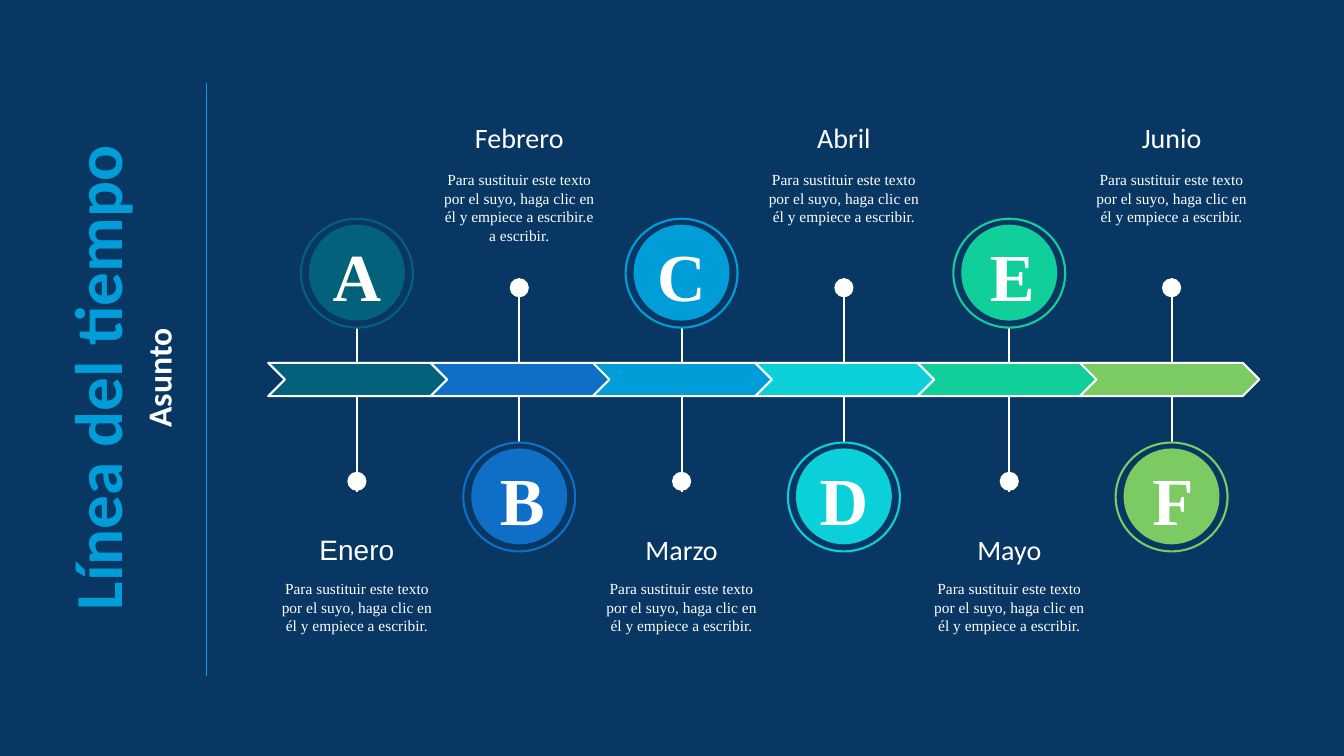
import pptx
import pptx.dml.color
import pptx.enum.shapes
import pptx.enum.text
import pptx.util
from lxml import etree
from pptx.oxml.ns import qn

Inches = pptx.util.Inches
Pt = pptx.util.Pt
SHAPE = pptx.enum.shapes.MSO_SHAPE

# Content
TITLE = "Línea del tiempo"
SUBTITLE = "Asunto"
BODY = "Para sustituir este texto por el suyo, haga clic en él y empiece a escribir."
BODY_LONG = BODY + "e a escribir."

COLORS = {
    "background": "083763", "white": "FFFFFF", "accent": "009DD9",
    "A": "04617B", "B": "0F6FC6", "C": "009DD9",
    "D": "0BD0D9", "E": "10CF9B", "F": "7CCA62",
}

# Letter, month, month font, description, centre of the stem, nudge of the letter
MONTHS = [
    ("A", "Enero", "Arial", BODY, 3.54, -0.05),
    ("B", "Febrero", "Calibri", BODY_LONG, 5.15, 0),
    ("C", "Marzo", "Calibri", BODY, 6.76, -0.05),
    ("D", "Abril", "Calibri", BODY, 8.37, -0.05),
    ("E", "Mayo", "Calibri", BODY, 10.01, 0),
    ("F", "Junio", "Calibri", BODY, 11.62, 0),
]

# Vertical places for circles above the band and for circles below it
CIRCLE_ABOVE = {"ring": 2.17, "stem": (4.88, 3.25), "dot": 4.68, "month": 5.23, "body": 5.7}
CIRCLE_BELOW = {"ring": 4.39, "stem": (2.76, 4.39), "dot": 2.76, "month": 1.15, "body": 1.64}

BAND_LEFT, BAND_TOP, BAND_PITCH = 2.66, 3.6, 1.61
BLOCK_WIDTH, BAND_HEIGHT = 1.78, 0.33
RING_WIDTH, RING_HEIGHT, DISC, DOT = 1.11, 1.08, 0.93, 0.19
LETTER_WIDTH = 0.58


def color(name):
    return pptx.dml.color.RGBColor.from_string(COLORS[name])


def write(shape, text, size, font="Calibri", fill="white", bold=False):
    frame = shape.text_frame
    frame.word_wrap = True
    frame.auto_size = pptx.enum.text.MSO_AUTO_SIZE.SHAPE_TO_FIT_TEXT
    paragraph = frame.paragraphs[0]
    paragraph.alignment = pptx.enum.text.PP_ALIGN.CENTER
    run = paragraph.add_run()
    run.text = text
    run.font.size = Pt(size)
    run.font.name = font
    run.font.bold = bold
    run.font.color.rgb = color(fill)


def add_text(left, top, width, height, text, **style):
    box = slide.shapes.add_textbox(Inches(left), Inches(top), Inches(width), Inches(height))
    write(box, text, **style)
    return box


def add_shape(kind, left, top, width, height, fill=None, line=None):
    shape = slide.shapes.add_shape(kind, Inches(left), Inches(top), Inches(width), Inches(height))
    shape.shadow.inherit = False
    if fill:
        shape.fill.solid()
        shape.fill.fore_color.rgb = color(fill)
    else:
        shape.fill.background()
    if line:
        shape.line.color.rgb = color(line)
        shape.line.width = Pt(1.5)
    else:
        shape.line.fill.background()
    return shape


def add_vertical_line(x, start, end, line, width):
    connector = slide.shapes.add_connector(
        pptx.enum.shapes.MSO_CONNECTOR.STRAIGHT, Inches(x), Inches(start), Inches(x), Inches(end))
    connector.line.color.rgb = color(line)
    connector.line.width = Pt(width)
    etree.SubElement(connector._element.spPr, qn("a:effectLst"))


presentation = pptx.Presentation()
presentation.slide_width = Inches(13.33)
presentation.slide_height = Inches(7.5)
slide = presentation.slides.add_slide(presentation.slide_layouts[5])
slide.background.fill.solid()
slide.background.fill.fore_color.rgb = color("background")

# Title, subtitle and divider, reading upwards
title = slide.shapes.title
title.left, title.top = Inches(-2.8), Inches(3.3)
title.width, title.height = Inches(7.5), Inches(0.9)
title.rotation = 270
write(title, TITLE, size=48, fill="accent", bold=True)
subtitle = add_text(-2.18, 3.5, 7.5, 0.5, SUBTITLE, size=24, bold=True)
subtitle.rotation = 270
add_vertical_line(2.05, 0.82, 6.71, "accent", 1)

# Stems, circles and texts, alternating above and below the band
for index, (letter, month, font, body, center, nudge) in enumerate(MONTHS):
    place = CIRCLE_BELOW if index % 2 else CIRCLE_ABOVE
    ring_top = place["ring"]
    block_left = center - BLOCK_WIDTH / 2
    add_vertical_line(center, *place["stem"], "white", 1.5)
    add_shape(SHAPE.OVAL, center - RING_WIDTH / 2, ring_top, RING_WIDTH, RING_HEIGHT, line=letter)
    add_shape(SHAPE.OVAL, center - DISC / 2, ring_top + 0.07, DISC, DISC, fill=letter, line=letter)
    add_text(center - LETTER_WIDTH / 2 + nudge, ring_top + 0.11, LETTER_WIDTH, 0.9, letter,
             size=48, font="Times New Roman", bold=True)
    add_shape(SHAPE.FLOWCHART_CONNECTOR, center - DOT / 2, place["dot"], DOT, DOT, fill="white")
    add_text(block_left, place["month"], BLOCK_WIDTH, 0.43, month, size=20, font=font)
    add_text(block_left, place["body"], BLOCK_WIDTH, 0.83, body, size=11, font="Times New Roman")

# Chevron band over the stems
for index, (letter, *_) in enumerate(MONTHS):
    chevron = add_shape(SHAPE.CHEVRON, BAND_LEFT + index * BAND_PITCH, BAND_TOP,
                        BLOCK_WIDTH, BAND_HEIGHT, fill=letter, line="white")
    chevron.adjustments[0] = 0.5

presentation.save("out.pptx")
